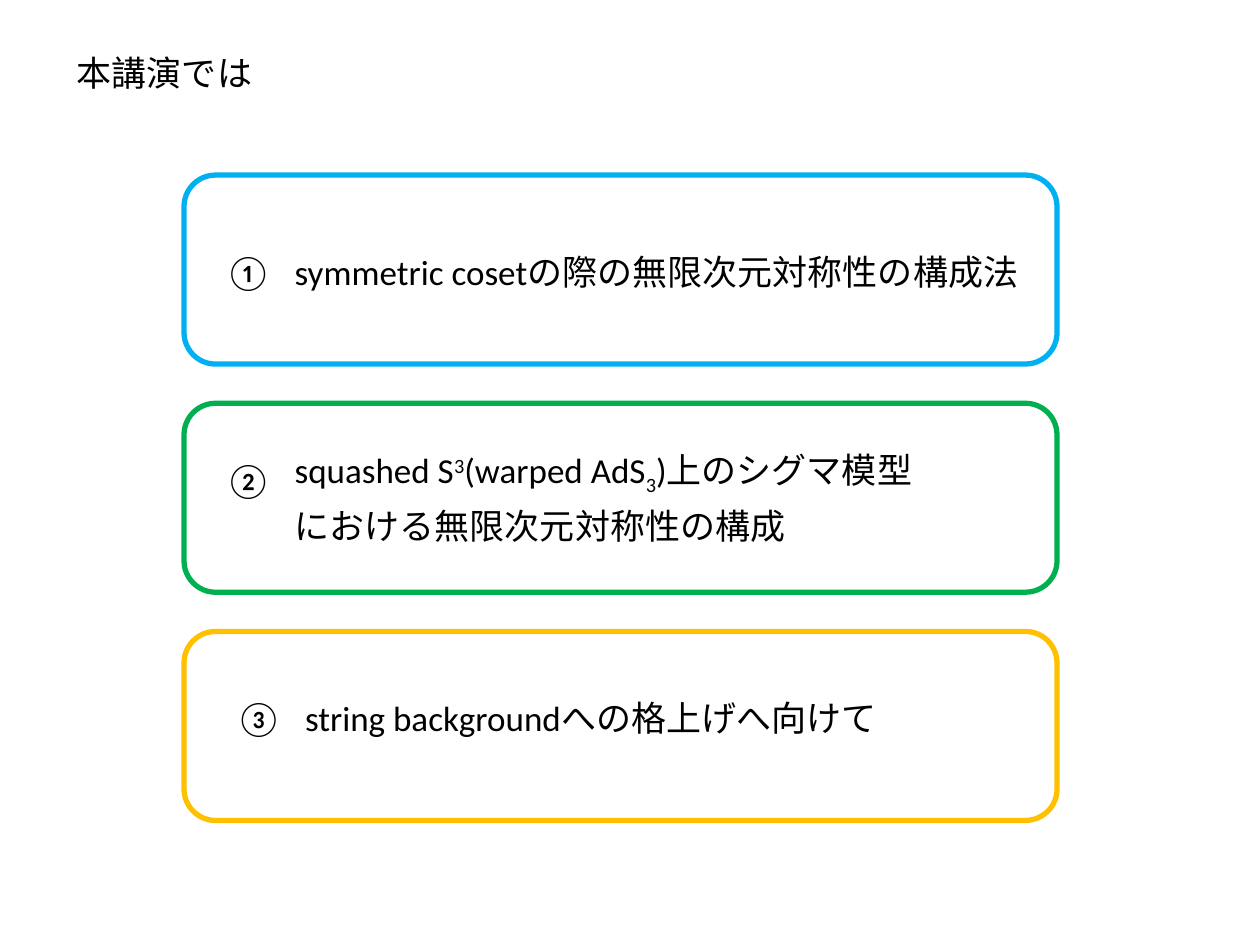
"""Build the talk outline slide with three framed points."""
from pptx import Presentation
from pptx.dml.color import RGBColor as RGB
from pptx.enum.shapes import MSO_SHAPE as Shape
from pptx.util import Cm, Pt


def color(code):
    return RGB.from_string(code)


def write(left, top, width, height, lines):
    box = slide.shapes.add_textbox(Cm(left), Cm(top), Cm(width), Cm(height))
    frame = box.text_frame
    frame.word_wrap = True
    for i, line in enumerate(lines):
        para = frame.add_paragraph() if i else frame.paragraphs[0]
        para.space_before = Pt(4.8)
        props = para._p.get_or_add_pPr()
        props.set("marL", str(Cm(0.95)))
        props.set("indent", str(Cm(-0.95)))
        para.font.size = Pt(20)
        para.font.name = "Calibri"
        para.font.color.rgb = color("000000")
        for text, shift in line:
            run = para.add_run()
            run.text = text
            if shift:
                run._r.get_or_add_rPr().set("baseline", str(shift * 1000))


deck = Presentation()
deck.slide_width, deck.slide_height = Cm(25.4), Cm(19.05)
slide = deck.slides.add_slide(deck.slide_layouts[6])

write(1.3, 0.91, 4.19, 1.19, [[("本講演では", 0)]])

squash = [
    [("squashed S", 0), ("3", 30), ("(warped AdS", 0), ("3", -25), (")上のシグマ模型", 0)],
    [("における無限次元対称性の構成", 0)],
]
points = [
    ("①", 4.29, 4.93, 4.93, 15.19, 1.19, [[("symmetric cosetの際の無限次元対称性の構成法", 0)]]),
    ("②", 4.29, 9.12, 8.92, 13.59, 2.21, squash),
    ("③", 4.5, 13.92, 13.92, 12.19, 1.19, [[("string backgroundへの格上げへ向けて", 0)]]),
]
for mark, left, mark_top, top, width, height, lines in points:
    write(left, mark_top, 1.4, 1.19, [[(mark, 0)]])
    write(left + 1.4, top, width, height, lines)

for i, code in enumerate(["00B0F0", "00B050", "FFC000"]):
    card = slide.shapes.add_shape(
        Shape.ROUNDED_RECTANGLE, Cm(3.71), Cm(3.53 + 4.6 * i), Cm(17.6), Cm(3.81))
    card.shadow.inherit = False
    card.fill.background()
    card.line.color.rgb = color(code)
    card.line.width = Pt(3)

deck.save("out.pptx")
